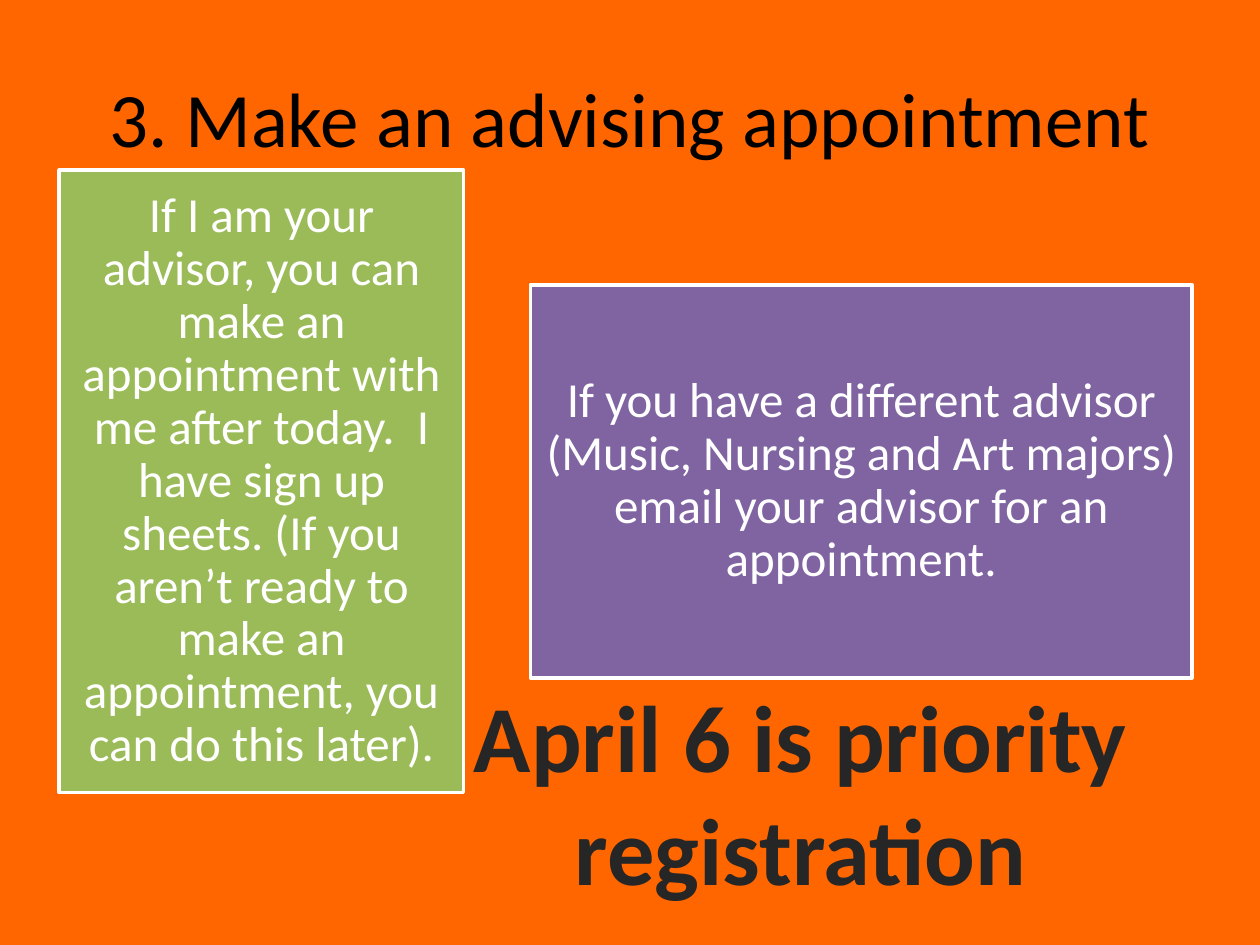
import pptx
import pptx.dml.color
import pptx.enum.shapes
import pptx.enum.text
import pptx.util
from lxml import etree
from pptx.util import Inches, Pt

# Content
TITLE = "3. Make an advising appointment"
DEADLINE = "April 6 is priority registration"
COLORS = {
    "background": "FF6600", "title": "000000", "white": "FFFFFF",
    "green": "9BBB59", "purple": "8064A2", "deadline": "262626",
}
ADVISOR_CARDS = [
    {"text": "If I am your advisor, you can make an appointment with me after today.  "
             "I have sign up sheets. (If you aren’t ready to make an appointment, "
             "you can do this later).",
     "fill": "green", "box": (0.47, 1.35, 3.21, 4.94)},
    {"text": "If you have a different advisor (Music, Nursing and Art majors) "
             "email your advisor for an appointment.",
     "fill": "purple", "box": (4.21, 2.26, 5.25, 3.12)},
]
TITLE_BOX = (0.5, 0.3, 9, 1.25)
DEADLINE_BOX = (3.33, 5.33, 6.05, 1.92)
FONT = "Calibri"


def color(name):
    return pptx.dml.color.RGBColor.from_string(COLORS[name])


def write(shape, text, size, color_name, bold=False):
    """Write one centred, wrapped paragraph and return its run."""
    shape.text_frame.word_wrap = True
    paragraph = shape.text_frame.paragraphs[0]
    paragraph.alignment = pptx.enum.text.PP_ALIGN.CENTER
    run = paragraph.add_run()
    run.text = text
    run.font.name = FONT
    run.font.size = Pt(size)
    run.font.bold = bold
    run.font.color.rgb = color(color_name)
    return run


def add_card(slide, card):
    shape = slide.shapes.add_shape(
        pptx.enum.shapes.MSO_SHAPE.RECTANGLE, *map(Inches, card["box"]))
    shape.shadow.inherit = False
    shape.fill.solid()
    shape.fill.fore_color.rgb = color(card["fill"])
    shape.line.color.rgb = color("white")
    shape.line.width = Pt(2)
    frame = shape.text_frame
    frame.vertical_anchor = pptx.enum.text.MSO_ANCHOR.MIDDLE
    frame.margin_left = frame.margin_right = Inches(0.12)
    frame.margin_top = frame.margin_bottom = Inches(0.12)
    write(shape, card["text"], 28, "white")
    frame.paragraphs[0].line_spacing = 0.9


def outline_text(run, color_name, width):
    namespace = "{http://schemas.openxmlformats.org/drawingml/2006/main}"
    line = etree.Element(namespace + "ln", w=str(Pt(width)))
    fill = etree.SubElement(line, namespace + "solidFill")
    etree.SubElement(fill, namespace + "srgbClr", val=COLORS[color_name])
    run.font._element.insert(0, line)


def main():
    presentation = pptx.Presentation()
    presentation.slide_width = Inches(10)
    presentation.slide_height = Inches(7.5)
    slide = presentation.slides.add_slide(presentation.slide_layouts[5])
    slide.background.fill.solid()
    slide.background.fill.fore_color.rgb = color("background")

    # Title
    title = slide.shapes.title
    title.left, title.top, title.width, title.height = map(Inches, TITLE_BOX)
    title.text_frame.vertical_anchor = pptx.enum.text.MSO_ANCHOR.MIDDLE
    write(title, TITLE, 44, "title")

    # Advisor cards
    for card in ADVISOR_CARDS:
        add_card(slide, card)

    # Registration date
    deadline = slide.shapes.add_textbox(*map(Inches, DEADLINE_BOX))
    run = write(deadline, DEADLINE, 54, "deadline", bold=True)
    outline_text(run, "white", 1.06)
    deadline.text_frame.auto_size = pptx.enum.text.MSO_AUTO_SIZE.SHAPE_TO_FIT_TEXT

    presentation.save("out.pptx")


if __name__ == "__main__":
    main()
